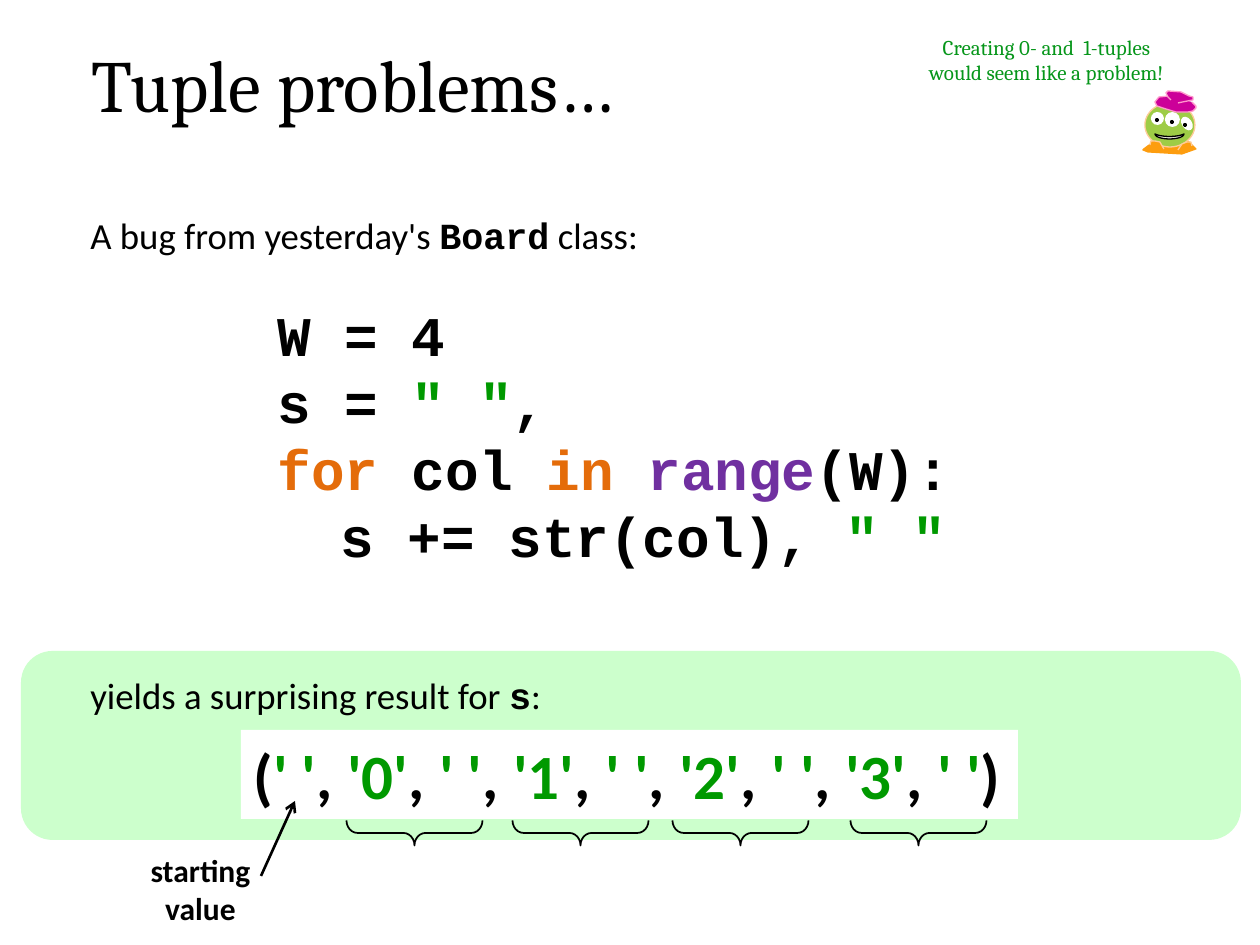
from lxml import etree
from pptx import Presentation
from pptx.dml.color import RGBColor
from pptx.enum.shapes import MSO_CONNECTOR, MSO_SHAPE as Preset
from pptx.enum.text import MSO_ANCHOR, MSO_AUTO_SIZE, PP_ALIGN
from pptx.oxml.ns import qn
from pptx.util import Pt

PX = 7257  # EMU per px, 126 px to the inch
BLACK, WHITE, GREEN = "000000", "FFFFFF", "009900"
ORANGE, PURPLE, MINT = "E46C0A", "7030A0", "CCFFCC"
LEAF, AMBER, PEACH = "9ECC46", "FD9D0F", "FFCC99"
MAGENTA, PINK = "CC0099", "FF99CC"
rgb = RGBColor.from_string


def paint(shape, fill=None, line=None, width=0.75):
    """Set fill and outline, None meaning no paint, and drop the shadow."""
    shape.shadow.inherit = False
    if fill:
        shape.fill.solid()
        shape.fill.fore_color.rgb = rgb(fill)
    else:
        shape.fill.background()
    if line:
        shape.line.color.rgb = rgb(line)
        shape.line.width = Pt(width)
    else:
        shape.line.fill.background()


def write(shape, lines, size, font, bold=False, color=BLACK,
          align=PP_ALIGN.LEFT, wrap=True):
    """Fill a shape with lines of (text, overrides) runs."""
    frame = shape.text_frame
    frame.word_wrap = wrap
    frame.auto_size = MSO_AUTO_SIZE.SHAPE_TO_FIT_TEXT
    frame.vertical_anchor = MSO_ANCHOR.TOP
    for index, line in enumerate(lines):
        paragraph = frame.add_paragraph() if index else frame.paragraphs[0]
        paragraph.alignment = align
        for text, style in line:
            run = paragraph.add_run()
            run.text = text
            run.font.size = Pt(size)
            run.font.name = style.get("font", font)
            run.font.bold = style.get("bold", bold)
            run.font.color.rgb = rgb(style.get("color", color))


deck = Presentation()
deck.slide_width, deck.slide_height = 1260 * PX, 945 * PX
shapes = deck.slides.add_slide(deck.slide_layouts[6]).shapes

result_band = shapes.add_shape(Preset.ROUNDED_RECTANGLE,
                               21 * PX, 651 * PX, 1220 * PX, 189 * PX)
paint(result_band, MINT)

title = shapes.add_textbox(79 * PX, 33 * PX, 966 * PX, 102 * PX)
write(title, [[("Tuple problems…", {})]], 42, "Cambria")

mono = {"font": "Courier New", "bold": True}
sentences = [
    (207, "A bug from yesterday's ", "Board", " class:"),
    (667, "yields a surprising result for ", "s", ":"),
]
for top, before, name, after in sentences:
    sentence = shapes.add_textbox(78 * PX, top * PX, 955 * PX, 57 * PX)
    write(sentence, [[(before, {}), (name, mono), (after, {})]], 21, "Calibri")

string, keyword, builtin = ({"color": c} for c in (GREEN, ORANGE, PURPLE))
code = shapes.add_textbox(265 * PX, 294 * PX, 765 * PX, 285 * PX)
write(code, [
    [("W = 4", {})],
    [("s = ", {}), ('" "', string), (",", {})],
    [("for", keyword), (" col ", {}), ("in ", keyword),
     ("range", builtin), ("(W):", {})],
    [("\ts += str(col), ", {}), ('" "', string)],
], 32, "Courier New", bold=True, wrap=False)

tuple_runs = [("(", {}), ("' '", string)]
for digit in range(4):
    tuple_runs += [(", ", {}), (f"'{digit}'", string),
                   (", ", {}), ("' '", string)]
tuple_runs.append((")", {}))
result = shapes.add_shape(Preset.RECTANGLE,
                          241 * PX, 730 * PX, 777 * PX, 89 * PX)
paint(result, WHITE)
write(result, [tuple_runs], 36, "Calibri", bold=True, wrap=False)

# Alien: feet, then face, then hat and hands
feet = [(1171, 139), (1189, 142), (1192, 145), (1196, 149), (1182, 154),
        (1148, 152), (1143, 150), (1144, 149), (1148, 146), (1154, 142),
        (1159, 141), (1163, 139)]
hat_brim = [(1169, 96), (1159, 97), (1155, 102), (1157, 106), (1163, 108),
            (1176, 112), (1188, 112), (1193, 111), (1196, 108), (1196, 106),
            (1192, 102)]
hat_top = [(1171, 100), (1168, 97), (1166, 93), (1168, 91), (1181, 92),
           (1189, 96), (1193, 97), (1193, 100), (1183, 102), (1178, 103)]
left_hand = [(1150, 145), (1151, 141), (1155, 141), (1160, 142), (1164, 149)]
right_hand = [(1192, 146), (1191, 142), (1187, 142), (1182, 144), (1178, 150)]

face = [
    (Preset.OVAL, 1145, 103, 50, 44, 0, LEAF, PEACH),
    (Preset.OVAL, 1151, 112, 13, 13, -33, WHITE, None),
    (Preset.OVAL, 1165, 112, 15, 15, 0, WHITE, None),
    (Preset.OVAL, 1182, 116, 10, 15, -34, WHITE, None),
    (Preset.OVAL, 1155, 118, 4, 4, 0, BLACK, None),
    (Preset.OVAL, 1170, 120, 4, 4, 0, BLACK, None),
    (Preset.OVAL, 1183, 123, 4, 4, 0, BLACK, None),
    (Preset.MOON, 1167, 122, 5, 29, 270, "EEECE1", BLACK),
]
outlines = [
    (feet, True, AMBER, AMBER),
    (hat_brim, False, MAGENTA, PINK),
    (hat_top, False, MAGENTA, PINK),
    (left_hand, False, AMBER, PEACH),
    (right_hand, False, AMBER, PEACH),
]
for points, closed, fill, line in outlines:
    builder = shapes.build_freeform(*points[0], scale=PX)
    builder.add_line_segments(points[1:], close=closed)
    paint(builder.convert_to_shape(), fill, line)
    if points is feet:
        for preset, left, top, width, height, turn, tint, edge in face:
            feature = shapes.add_shape(preset, left * PX, top * PX,
                                       width * PX, height * PX)
            feature.rotation = turn
            paint(feature, tint, edge)

remark = shapes.add_textbox(903 * PX, 28 * PX, 287 * PX, 63 * PX)
write(remark, [[("Creating 0- and  1-tuples would seem like a problem!", {})]],
      12, "Cambria", color="06961A", align=PP_ALIGN.CENTER)

for left in (402, 568, 728, 906):
    loop_pass = shapes.add_shape(Preset.RIGHT_BRACE,
                                 left * PX, 765 * PX, 25 * PX, 136 * PX)
    loop_pass.rotation = 90
    loop_pass.adjustments[0] = 0.44
    paint(loop_pass, line=BLACK, width=1)

pointer = shapes.add_connector(MSO_CONNECTOR.STRAIGHT,
                               261 * PX, 876 * PX, 295 * PX, 801 * PX)
pointer.line.color.rgb = rgb(BLACK)
pointer.line.width = Pt(1.5)
etree.SubElement(pointer.line._get_or_add_ln(), qn("a:tailEnd"), type="arrow")
etree.SubElement(pointer._element.spPr, qn("a:effectLst"))

start_label = shapes.add_textbox(137 * PX, 845 * PX, 127 * PX, 89 * PX)
write(start_label, [[("starting value", {})]], 18, "Calibri", bold=True,
      align=PP_ALIGN.CENTER)

deck.save("out.pptx")
